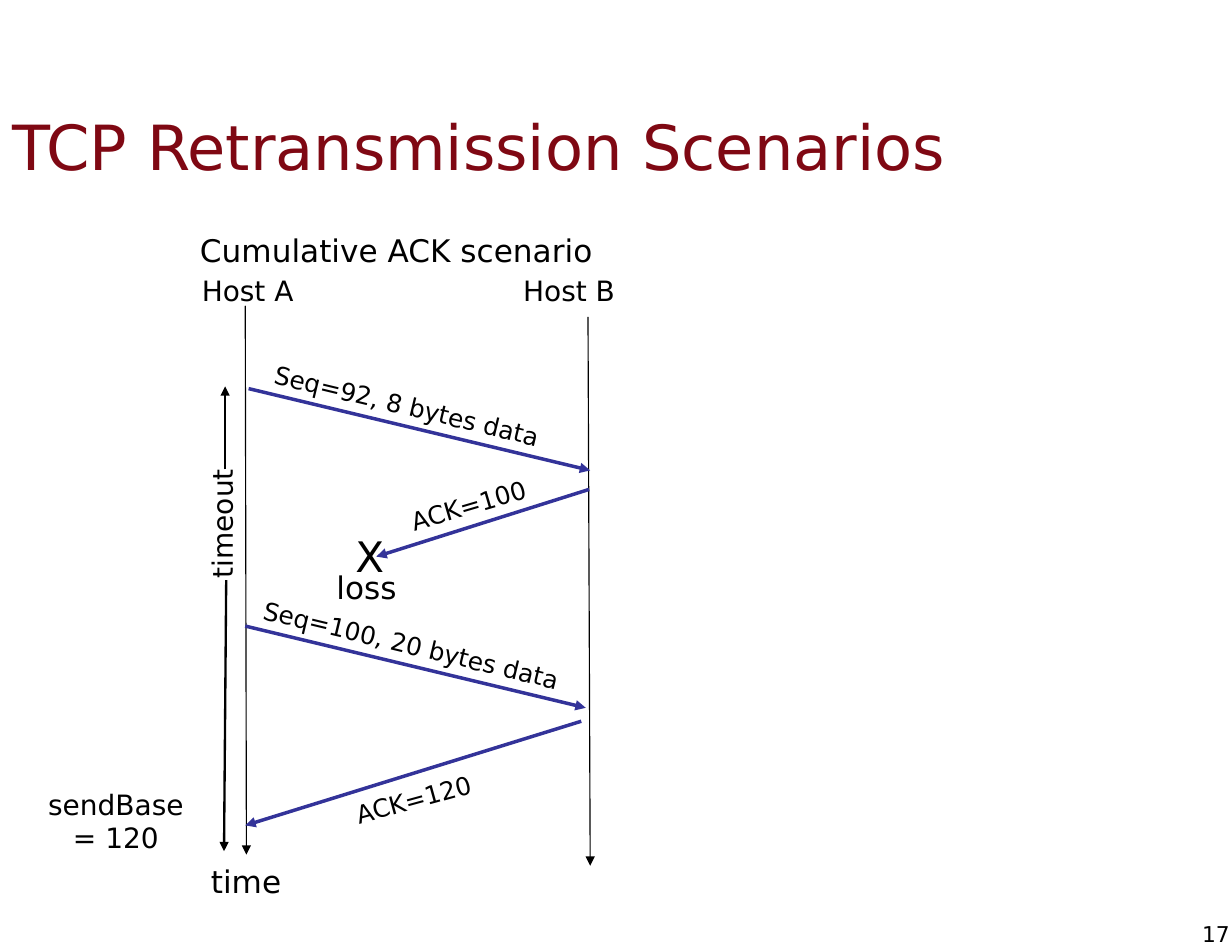
from pptx import Presentation
from pptx.dml.color import RGBColor
from pptx.enum.shapes import MSO_CONNECTOR as Connector
from pptx.enum.text import MSO_ANCHOR as Anchor, PP_ALIGN as Align
from pptx.oxml.ns import qn
from pptx.util import Inches, Pt
from lxml.etree import SubElement

FONT = "DejaVu Sans"
BLACK = "000000"
BLUE = "333399"
MAROON = "7F0813"


def color(hex_text):
    return RGBColor.from_string(hex_text)


def write(box, text, size=18, fill=BLACK, align=Align.RIGHT, anchor=Anchor.TOP,
          inset=(0.1, 0.05), wrap=False):
    frame = box.text_frame
    frame.text = text
    frame.word_wrap = wrap
    frame.vertical_anchor = anchor
    frame.margin_left = frame.margin_right = Inches(inset[0])
    frame.margin_top = frame.margin_bottom = Inches(inset[1])
    for para in frame.paragraphs:
        para.alignment = align
        for span in para.runs:
            span.font.name = FONT
            span.font.size = Pt(size)
            span.font.color.rgb = color(fill)


deck = Presentation()
deck.slide_width = Inches(11)
deck.slide_height = Inches(8.5)
page = deck.slides.add_slide(deck.slide_layouts[5])

title = page.shapes.title
title.left, title.top = Inches(0), Inches(0.59)
title.width, title.height = Inches(11), Inches(1.42)
write(title, "TCP Retransmission Scenarios", size=40, fill=MAROON,
      align=Align.LEFT, anchor=Anchor.MIDDLE, inset=(0.11, 0.06), wrap=True)

timelines = [(2.19, 2.73, 2.2, 7.63), (5.25, 2.83, 5.27, 7.73)]
messages = [
    (2.22, 3.47, 5.27, 4.2),
    (5.26, 4.37, 3.36, 4.97),
    (2.19, 5.59, 5.23, 6.32),
    (5.19, 6.44, 2.19, 7.37),
]
timeout_arrows = [(2.01, 4.19, 2.01, 3.45), (2.02, 5.18, 2, 7.6)]

for arrows, stroke, weight in [
    (timelines, BLACK, 0.75),
    (messages, BLUE, 2.25),
    (timeout_arrows, BLACK, 1.5),
]:
    for ends in arrows:
        arrow = page.shapes.add_connector(
            Connector.STRAIGHT, *[Inches(value) for value in ends])
        arrow.line.color.rgb = color(stroke)
        arrow.line.width = Pt(weight)
        SubElement(arrow.line._get_or_add_ln(), qn("a:tailEnd"), type="triangle")
        SubElement(arrow._element.spPr, qn("a:effectLst"))

labels = [
    ("Cumulative ACK scenario", 1.65, 2.02, 3.74, 0.44, 20, 0),
    ("Host A", 1.68, 2.39, 1.04, 0.4, 18, 0),
    ("Host B", 4.55, 2.39, 1.04, 0.4, 18, 0),
    ("Seq=92, 8 bytes data", 2.27, 3.43, 2.67, 0.37, 16, 13.5),
    ("ACK=100", 3.53, 4.33, 1.28, 0.37, 16, 343.6),
    ("X", 3.06, 4.69, 0.47, 0.57, 27, 0),
    ("loss", 2.9, 5.03, 0.74, 0.44, 20, 0),
    ("timeout", 1.39, 4.48, 1.18, 0.4, 18, 270),
    ("Seq=100, 20 bytes data", 2.17, 5.57, 2.95, 0.37, 16, 13.6),
    ("ACK=120", 3.01, 6.96, 1.31, 0.37, 16, 344.6),
    ("time", 1.78, 7.65, 0.83, 0.44, 20, 0),
]
for text, left, top, width, height, size, angle in labels:
    box = page.shapes.add_textbox(
        Inches(left), Inches(top), Inches(width), Inches(height))
    box.rotation = angle
    write(box, text, size=size)

send_base = page.shapes.add_textbox(
    Inches(0.3), Inches(6.97), Inches(1.47), Inches(0.72))
write(send_base, "sendBase\n= 120", align=Align.CENTER, inset=(0.11, 0.06))

page_number = page.shapes.add_textbox(
    Inches(10.64), Inches(8.22), Inches(0.34), Inches(0.24))
write(page_number, "17", size=14, anchor=Anchor.MIDDLE, inset=(0, 0), wrap=True)

deck.save("out.pptx")
